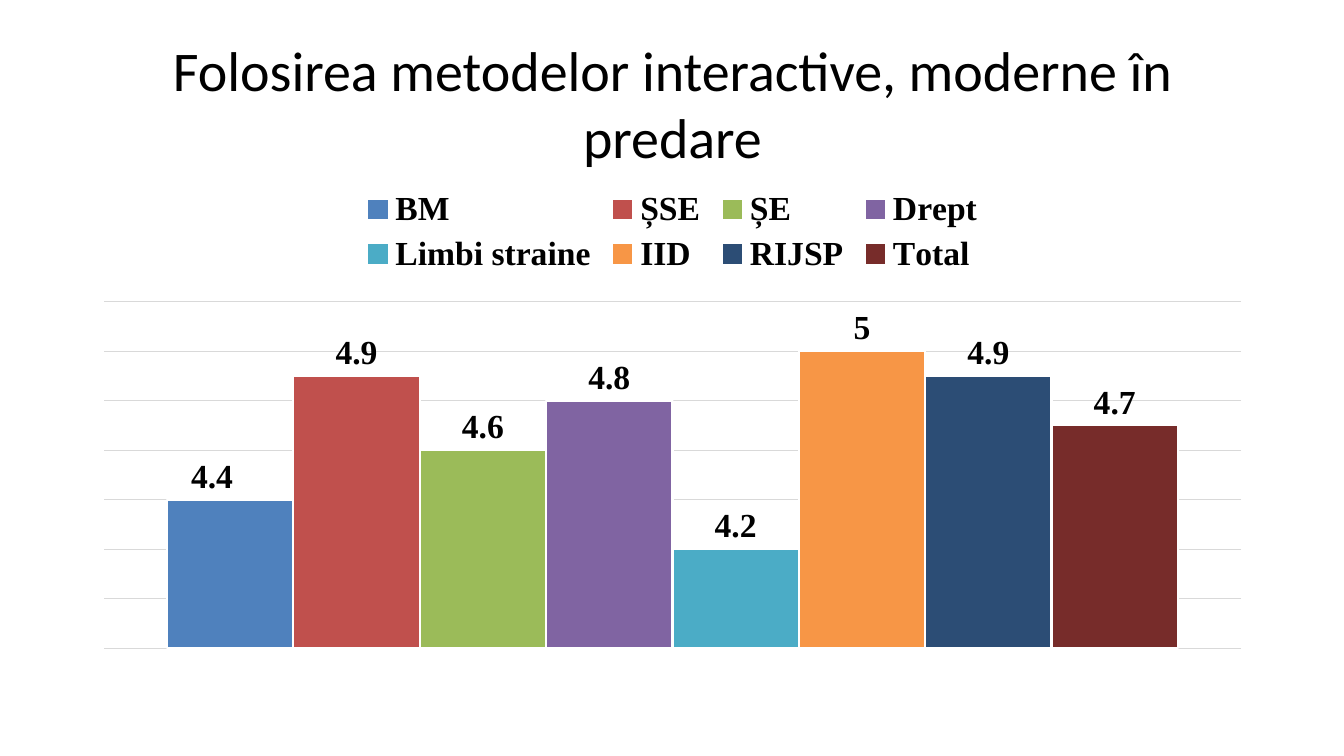
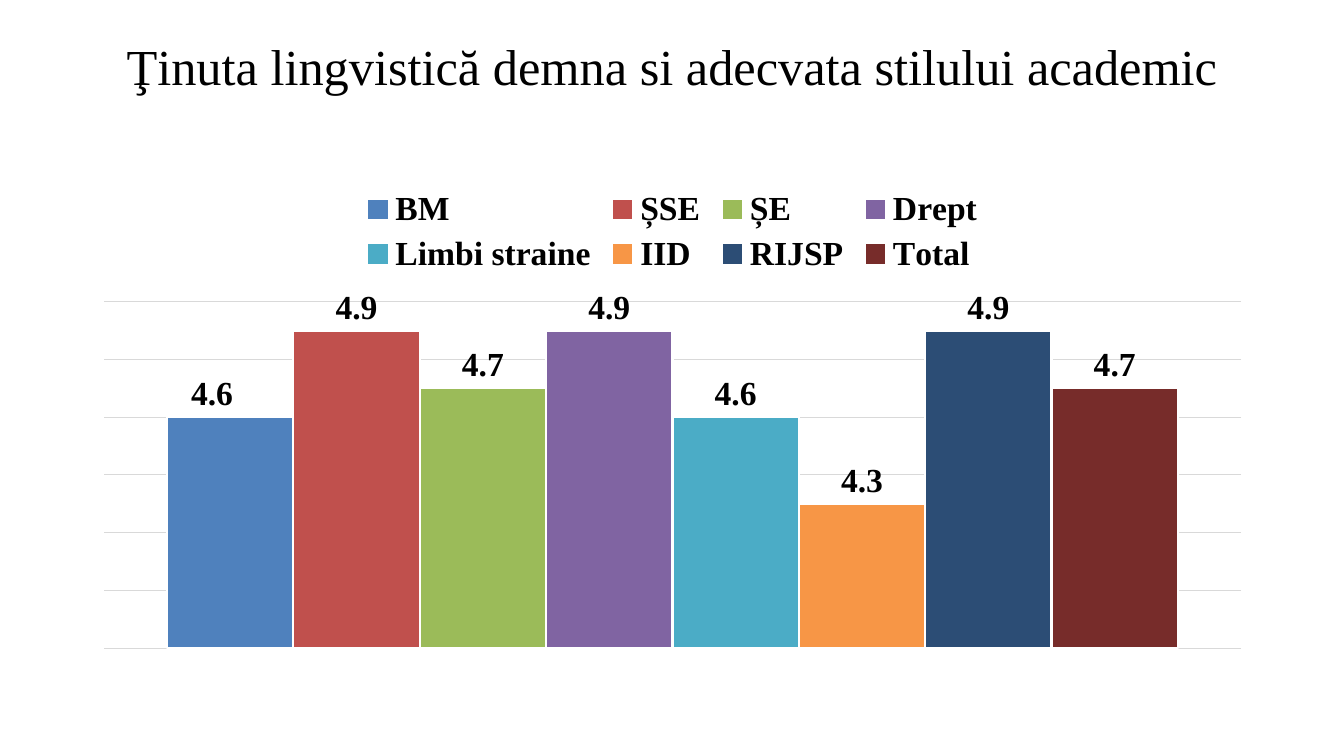
from dataclasses import dataclass

from lxml import etree
from pptx import Presentation
from pptx import util as u
from pptx.chart import data as cd
from pptx.chart.chart import Chart
from pptx.dml.color import RGBColor
from pptx.enum import chart as ch, text
from pptx.oxml import ns
from pptx.slide import Slide


# Shared look
@dataclass(frozen=True)
class Theme:
    ink: str = "000000"
    paper: str = "FFFFFF"
    grid: str = "D9D9D9"
    chart_font: str = "Times New Roman"
    chart_size: float = 24
    grid_width: float = 0.75
    outline_width: float = 1.5


@dataclass(frozen=True)
class Faculty:
    name: str
    color: str


@dataclass(frozen=True)
class RatingSlide:
    title: str
    font: str
    size: float
    scores: tuple[float, ...]
    axis_max: float


THEME = Theme()
AXIS_MIN, AXIS_STEP = 3.8, 0.2
LEFT, WIDTH = u.Inches(0.67), u.Inches(12)
PLOT_BOX = {"x": 0.03, "y": 0.251, "w": 0.94, "h": 0.695}
FIRST_LABEL_SHIFT = {"x": -0.015, "y": 0}

FACULTIES = (
    Faculty("BM", "4F81BD"),
    Faculty("ȘSE", "C0504D"),
    Faculty("ȘE", "9BBB59"),
    Faculty("Drept", "8064A2"),
    Faculty("Limbi straine", "4BACC6"),
    Faculty("IID", "F79646"),
    Faculty("RIJSP", "2C4D75"),
    Faculty("Total", "772C2A"),
)

SLIDES = (
    RatingSlide("Folosirea metodelor interactive, moderne în predare", "Calibri", 40,
                (4.4, 4.9, 4.6, 4.8, 4.2, 5, 4.9, 4.7), 5.2),
    RatingSlide("Ţinuta lingvistică demna si adecvata stilului academic", "Times New Roman", 36,
                (4.6, 4.9, 4.7, 4.9, 4.6, 4.3, 4.9, 4.7), 5.0),
)


def rgb(color: str) -> RGBColor:
    return RGBColor.from_string(color)


def style_font(font, name: str, size: float, bold: bool = False) -> None:
    font.name, font.size, font.bold = name, u.Pt(size), bold
    font.color.rgb = rgb(THEME.ink)


def style_chart_font(font) -> None:
    style_font(font, THEME.chart_font, THEME.chart_size, True)


def manual_layout(**values: str | float):
    """Build a c:layout element from its child names and values."""
    layout = etree.Element(ns.qn("c:layout"))
    manual = etree.SubElement(layout, ns.qn("c:manualLayout"))
    for tag, value in values.items():
        etree.SubElement(manual, ns.qn(f"c:{tag}")).set("val", str(value))
    return layout


def add_title(s: Slide, spec: RatingSlide) -> None:
    tf = s.shapes.add_textbox(LEFT, u.Inches(0.3), WIDTH, u.Inches(1.25)).text_frame
    tf.word_wrap = True
    tf.vertical_anchor = text.MSO_ANCHOR.TOP
    p = tf.paragraphs[0]
    p.text = spec.title
    p.alignment = text.PP_ALIGN.CENTER
    style_font(p.runs[0].font, spec.font, spec.size)


def style_axes(chart: Chart, axis_max: float) -> None:
    chart.category_axis.visible = False
    axis = chart.value_axis
    axis.visible = False
    axis.minimum_scale, axis.maximum_scale = AXIS_MIN, axis_max
    axis.major_unit = AXIS_STEP
    axis.has_major_gridlines = True
    line = axis.major_gridlines.format.line
    line.color.rgb, line.width = rgb(THEME.grid), u.Pt(THEME.grid_width)


def style_series(chart: Chart) -> None:
    for series, faculty in zip(chart.plots[0].series, FACULTIES):
        series.format.fill.solid()
        series.format.fill.fore_color.rgb = rgb(faculty.color)
        line = series.format.line
        line.color.rgb, line.width = rgb(THEME.paper), u.Pt(THEME.outline_width)
        labels = series.data_labels
        labels.show_value = True
        labels.position = ch.XL_LABEL_POSITION.OUTSIDE_END
        style_chart_font(labels.font)


def place_parts(chart: Chart) -> None:
    # Plot area
    area = chart.element.find(f".//{ns.qn('c:plotArea')}")
    for old in area.findall(ns.qn("c:layout")):
        area.remove(old)
    area.insert(0, manual_layout(layoutTarget="inner", xMode="edge", yMode="edge", **PLOT_BOX))
    # First label sits slightly left of its column
    label = chart.plots[0].series[0].points[0].data_label
    style_chart_font(label.font)
    label.position = ch.XL_LABEL_POSITION.OUTSIDE_END
    idx = chart.element.find(f".//{ns.qn('c:dLbl')}/{ns.qn('c:idx')}")
    idx.addnext(manual_layout(**FIRST_LABEL_SHIFT))


def add_rating_chart(s: Slide, spec: RatingSlide) -> None:
    data = cd.CategoryChartData()
    data.categories = ["1"]
    for faculty, score in zip(FACULTIES, spec.scores):
        data.add_series(faculty.name, [score])
    chart = s.shapes.add_chart(ch.XL_CHART_TYPE.COLUMN_CLUSTERED, LEFT, u.Inches(1.75),
                               WIDTH, u.Inches(4.95), data).chart
    chart.has_title = False
    style_chart_font(chart.font)
    chart.has_legend = True
    chart.legend.position = ch.XL_LEGEND_POSITION.TOP
    chart.legend.include_in_layout = False
    style_chart_font(chart.legend.font)
    plot = chart.plots[0]
    plot.gap_width, plot.overlap, plot.vary_by_categories = 100, 0, False
    style_axes(chart, spec.axis_max)
    style_series(chart)
    place_parts(chart)


def main() -> None:
    prs = Presentation()
    prs.slide_width, prs.slide_height = u.Inches(13.33), u.Inches(7.5)
    for spec in SLIDES:
        s = prs.slides.add_slide(prs.slide_layouts[6])
        add_title(s, spec)
        add_rating_chart(s, spec)
    prs.save("out.pptx")


if __name__ == "__main__":
    main()
